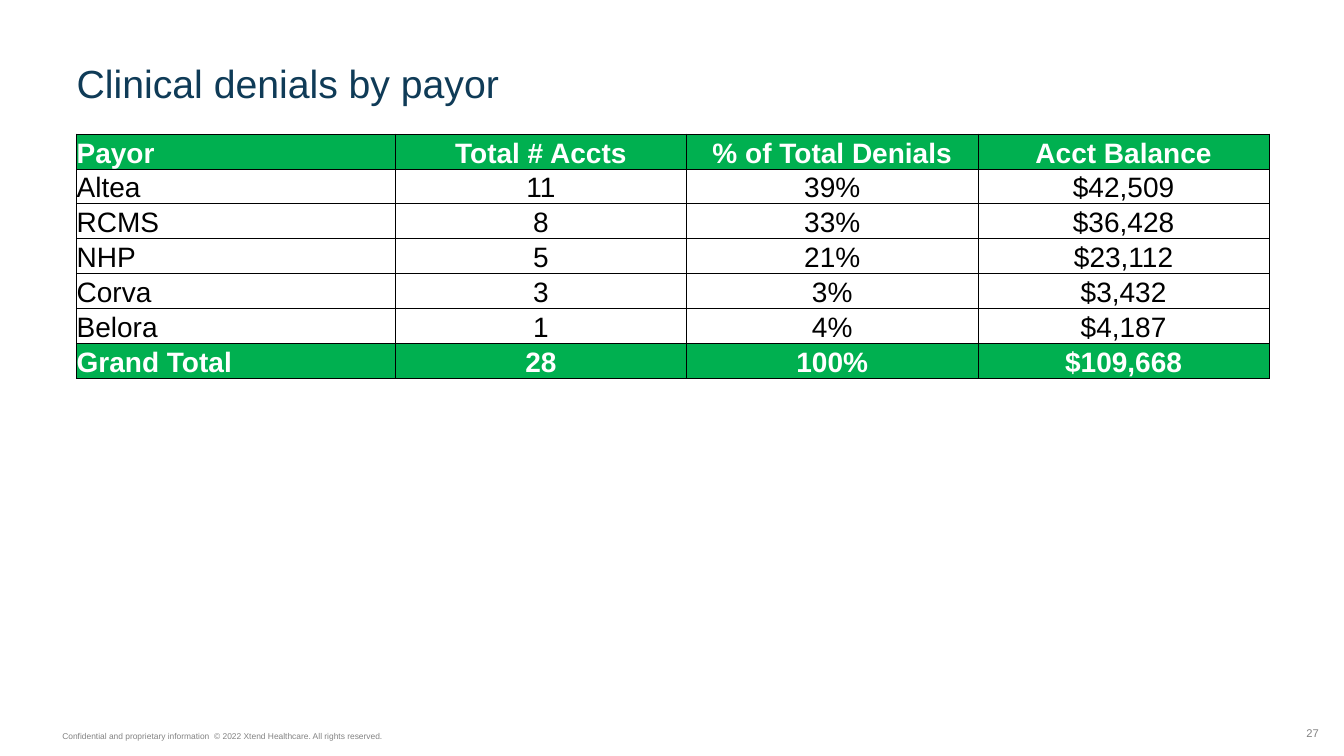
from lxml import etree
from pptx import Presentation
from pptx.dml.color import RGBColor
from pptx.enum.text import MSO_ANCHOR, MSO_AUTO_SIZE, PP_ALIGN
from pptx.oxml.ns import qn
from pptx.util import Inches, Pt

LEFT, CENTER, RIGHT = PP_ALIGN.LEFT, PP_ALIGN.CENTER, PP_ALIGN.RIGHT
TOP, BOTTOM = MSO_ANCHOR.TOP, MSO_ANCHOR.BOTTOM
GREEN, WHITE, BLACK, NAVY, GRAY = "00B050", "FFFFFF", "000000", "0F3B57", "838383"


def style(frame, size, color, align=LEFT, bold=False):
    para = frame.paragraphs[0]
    para.alignment = align
    font = para.runs[0].font
    font.name, font.size, font.bold = "Arial", Pt(size), bold
    font.color.rgb = RGBColor.from_string(color)


def border(cell, color, width):
    props = cell._tc.get_or_add_tcPr()
    for side in ("lnL", "lnR", "lnT", "lnB"):
        line = etree.SubElement(props, qn(f"a:{side}"), w=str(Pt(width)))
        fill = etree.SubElement(line, qn("a:solidFill"))
        etree.SubElement(fill, qn("a:srgbClr"), val=color)


prs = Presentation()
prs.slide_width, prs.slide_height = Inches(13.33), Inches(7.5)
slide = prs.slides.add_slide(prs.slide_layouts[5])

# Title
title = slide.shapes.title
title.left, title.top = Inches(0.76), Inches(0.49)
title.width, title.height = Inches(8.44), Inches(0.75)
frame = title.text_frame
frame.text = "Clinical denials by payor"
frame.auto_size = MSO_AUTO_SIZE.NONE
frame.vertical_anchor = TOP
frame.margin_left = frame.margin_right = 0
frame.margin_top = Inches(0.1)
style(frame, 28, NAVY)

# Denials table
rows = [
    ("Payor", "Total # Accts", "% of Total Denials", "Acct Balance"),
    ("Altea", "11", "39%", "$42,509"),
    ("RCMS", "8", "33%", "$36,428"),
    ("NHP", "5", "21%", "$23,112"),
    ("Corva", "3", "3%", "$3,432"),
    ("Belora", "1", "4%", "$4,187"),
    ("Grand Total", "28", "100%", "$109,668"),
]
table = slide.shapes.add_table(
    len(rows), len(rows[0]), Inches(0.76), Inches(1.33), Inches(11.82), Inches(2.42)
).table
for col, width in zip(table.columns, (3.16, 2.89, 2.89, 2.89)):
    col.width = Inches(width)

for r, row in enumerate(rows):
    band = r in (0, len(rows) - 1)
    for c, text in enumerate(row):
        cell = table.cell(r, c)
        cell.text_frame.text = text
        cell.vertical_anchor = BOTTOM
        cell.margin_left = cell.margin_right = 0
        cell.margin_top = cell.margin_bottom = 0
        style(cell.text_frame, 20, WHITE if band else BLACK, CENTER if c else LEFT, band)
        border(cell, BLACK, 0.5)
        if band:
            cell.fill.solid()
            cell.fill.fore_color.rgb = RGBColor.from_string(GREEN)
        else:
            cell.fill.background()

# Footer
notice = slide.shapes.add_textbox(Inches(0.52), Inches(7.2), Inches(3.43), Inches(0.2)).text_frame
notice.text = "Confidential and proprietary information  © 2022 Xtend Healthcare. All rights reserved."
notice.word_wrap = False
style(notice, 6, GRAY)

number = slide.shapes.add_textbox(Inches(12.32), Inches(7.16), Inches(0.76), Inches(0.27)).text_frame
number.text = "27"
number.word_wrap = True
number.margin_left = number.margin_right = 0
style(number, 8, GRAY, RIGHT)

prs.save("out.pptx")
